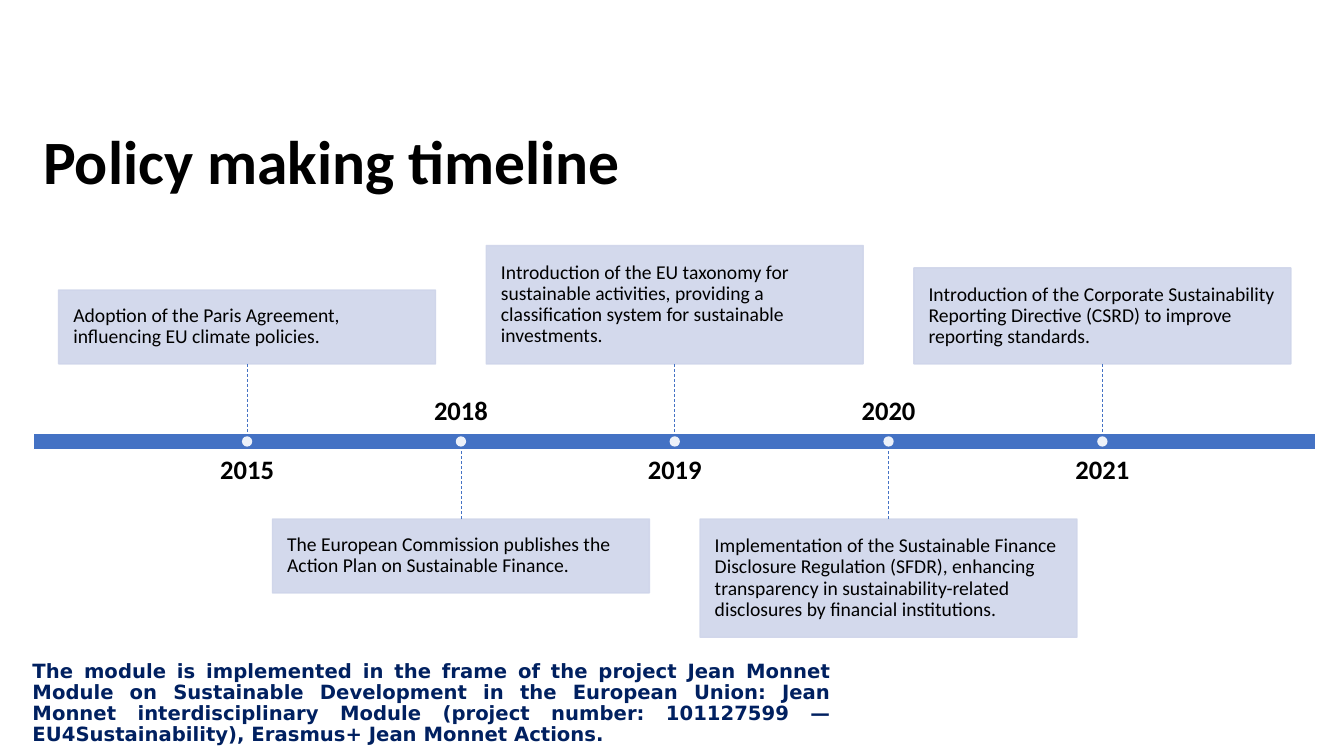
from dataclasses import dataclass
from typing import NamedTuple

from lxml.etree import SubElement
from pptx import Presentation
from pptx.dml.color import RGBColor
from pptx.enum.dml import MSO_LINE
from pptx.enum.shapes import MSO_CONNECTOR, MSO_SHAPE
from pptx.enum.text import MSO_ANCHOR, PP_ALIGN
from pptx.oxml.ns import qn
from pptx.util import Cm, Pt


@dataclass(frozen=True)
class Theme:
    font: str = "Calibri"
    footer_font: str = "DejaVu Sans"
    black: RGBColor = RGBColor(0x00, 0x00, 0x00)
    white: RGBColor = RGBColor(0xFF, 0xFF, 0xFF)
    blue: RGBColor = RGBColor(0x44, 0x72, 0xC4)
    pale_blue: RGBColor = RGBColor(0xCF, 0xD5, 0xEA)
    navy: RGBColor = RGBColor(0x00, 0x20, 0x60)
    title_size: Pt = Pt(44)
    year_size: Pt = Pt(19)
    body_size: Pt = Pt(14)
    opacity: int = 90


class Milestone(NamedTuple):
    year: str
    event: str
    lines: int


THEME = Theme()

MILESTONES = [
    Milestone("2015", "Adoption of the Paris Agreement, influencing EU climate policies.", 2),
    Milestone("2018", "The European Commission publishes the Action Plan on "
              "Sustainable Finance.", 2),
    Milestone("2019", "Introduction of the EU taxonomy for sustainable activities, "
              "providing a classification system for sustainable investments.", 4),
    Milestone("2020", "Implementation of the Sustainable Finance Disclosure Regulation "
              "(SFDR), enhancing transparency in sustainability-related disclosures "
              "by financial institutions.", 4),
    Milestone("2021", "Introduction of the Corporate Sustainability Reporting Directive "
              "(CSRD) to improve reporting standards.", 3),
]

FOOTER = ("The module is implemented in the frame of the project Jean Monnet Module on "
          "Sustainable Development in the European Union: Jean Monnet interdisciplinary "
          "Module (project number: 101127599 — EU4Sustainability), Erasmus+ Jean Monnet "
          "Actions.")

BAR_LEFT, BAR_TOP, BAR_WIDTH, BAR_HEIGHT = Cm(0.84), Cm(10.92), Cm(32.33), Cm(0.41)
BAR_BOTTOM = BAR_TOP + BAR_HEIGHT
STEP = BAR_WIDTH // (len(MILESTONES) + 1)
CARD_WIDTH, CARD_INSET = Cm(9.5), Cm(0.37)
CARD_PADDING, CARD_LINE = Cm(0.74), Cm(0.56)
STEM = Cm(1.75)
YEAR_WIDTH, YEAR_HEIGHT, YEAR_GAP = Cm(8.6), Cm(1.17), Cm(0.18)
DOT = Cm(0.26)


def write(shape, text, size, color=THEME.black, font=THEME.font, bold=False,
          align=PP_ALIGN.LEFT, anchor=MSO_ANCHOR.TOP, inset=None):
    frame = shape.text_frame
    frame.word_wrap = True
    frame.vertical_anchor = anchor
    if inset is not None:
        frame.margin_left = frame.margin_right = inset
        frame.margin_top = frame.margin_bottom = inset
    paragraph = frame.paragraphs[0]
    paragraph.text = text
    paragraph.alignment = align
    paragraph.line_spacing = 0.9
    paragraph.font.name = font
    paragraph.font.size = size
    paragraph.font.bold = bold
    paragraph.font.color.rgb = color


def add_filled(slide, preset, left, top, width, height, fill, line=None):
    shape = slide.shapes.add_shape(preset, left, top, width, height)
    shape.shadow.inherit = False
    shape.fill.solid()
    shape.fill.fore_color.rgb = fill
    if line is None:
        shape.line.fill.background()
    else:
        shape.line.color.rgb = line
        shape.line.width = Pt(1)
    return shape


def make_translucent(shape):
    for color in shape.element.spPr.iter(qn("a:srgbClr")):
        SubElement(color, qn("a:alpha")).set("val", str(THEME.opacity * 1000))


def add_card(slide, milestone, center, above):
    height = CARD_PADDING + CARD_LINE * milestone.lines
    top = BAR_TOP - STEM - height if above else BAR_BOTTOM + STEM
    card = add_filled(slide, MSO_SHAPE.RECTANGLE, center - CARD_WIDTH // 2, top,
                      CARD_WIDTH, height, THEME.pale_blue, THEME.pale_blue)
    make_translucent(card)
    write(card, milestone.event, THEME.body_size,
          anchor=MSO_ANCHOR.MIDDLE, inset=CARD_INSET)
    return card


def add_stem(slide, card, center, above):
    """Join the card to the timeline bar with a dashed line."""
    bar_edge = BAR_TOP if above else BAR_BOTTOM
    stem = slide.shapes.add_connector(MSO_CONNECTOR.STRAIGHT, center, bar_edge,
                                      center, bar_edge)
    stem.begin_connect(card, 2 if above else 0)
    stem.line.color.rgb = THEME.blue
    stem.line.width = Pt(0.5)
    stem.line.dash_style = MSO_LINE.DASH
    SubElement(stem.element.spPr, qn("a:effectLst"))


def add_year(slide, year, center, above):
    top = BAR_TOP - YEAR_GAP - YEAR_HEIGHT if above else BAR_BOTTOM + YEAR_GAP
    label = slide.shapes.add_textbox(center - YEAR_WIDTH // 2, top,
                                     YEAR_WIDTH, YEAR_HEIGHT)
    write(label, year, THEME.year_size, bold=True, align=PP_ALIGN.CENTER,
          anchor=MSO_ANCHOR.BOTTOM if above else MSO_ANCHOR.TOP, inset=0)


def add_dot(slide, center):
    dot = add_filled(slide, MSO_SHAPE.OVAL, center - DOT // 2,
                     BAR_TOP + (BAR_HEIGHT - DOT) // 2, DOT, DOT, THEME.white)
    make_translucent(dot)


def add_timeline(slide):
    add_filled(slide, MSO_SHAPE.RECTANGLE, BAR_LEFT, BAR_TOP, BAR_WIDTH, BAR_HEIGHT,
               THEME.blue, THEME.white)
    for index, milestone in enumerate(MILESTONES):
        center = BAR_LEFT + STEP * (index + 1)
        card_above = index % 2 == 0
        card = add_card(slide, milestone, center, card_above)
        add_stem(slide, card, center, card_above)
        add_year(slide, milestone.year, center, not card_above)
        add_dot(slide, center)


def main():
    deck = Presentation()
    deck.slide_width, deck.slide_height = Cm(33.87), Cm(19.05)
    slide = deck.slides.add_slide(deck.slide_layouts[6])

    footer = slide.shapes.add_textbox(Cm(0.57), Cm(16.54), Cm(20.62), Cm(2.51))
    write(footer, FOOTER, THEME.body_size, THEME.navy, THEME.footer_font,
          bold=True, align=PP_ALIGN.JUSTIFY)
    title = slide.shapes.add_textbox(Cm(0.84), Cm(2.77), Cm(30.18), Cm(2.74))
    write(title, "Policy making timeline", THEME.title_size, bold=True,
          anchor=MSO_ANCHOR.MIDDLE)
    add_timeline(slide)

    deck.save("out.pptx")


if __name__ == "__main__":
    main()
